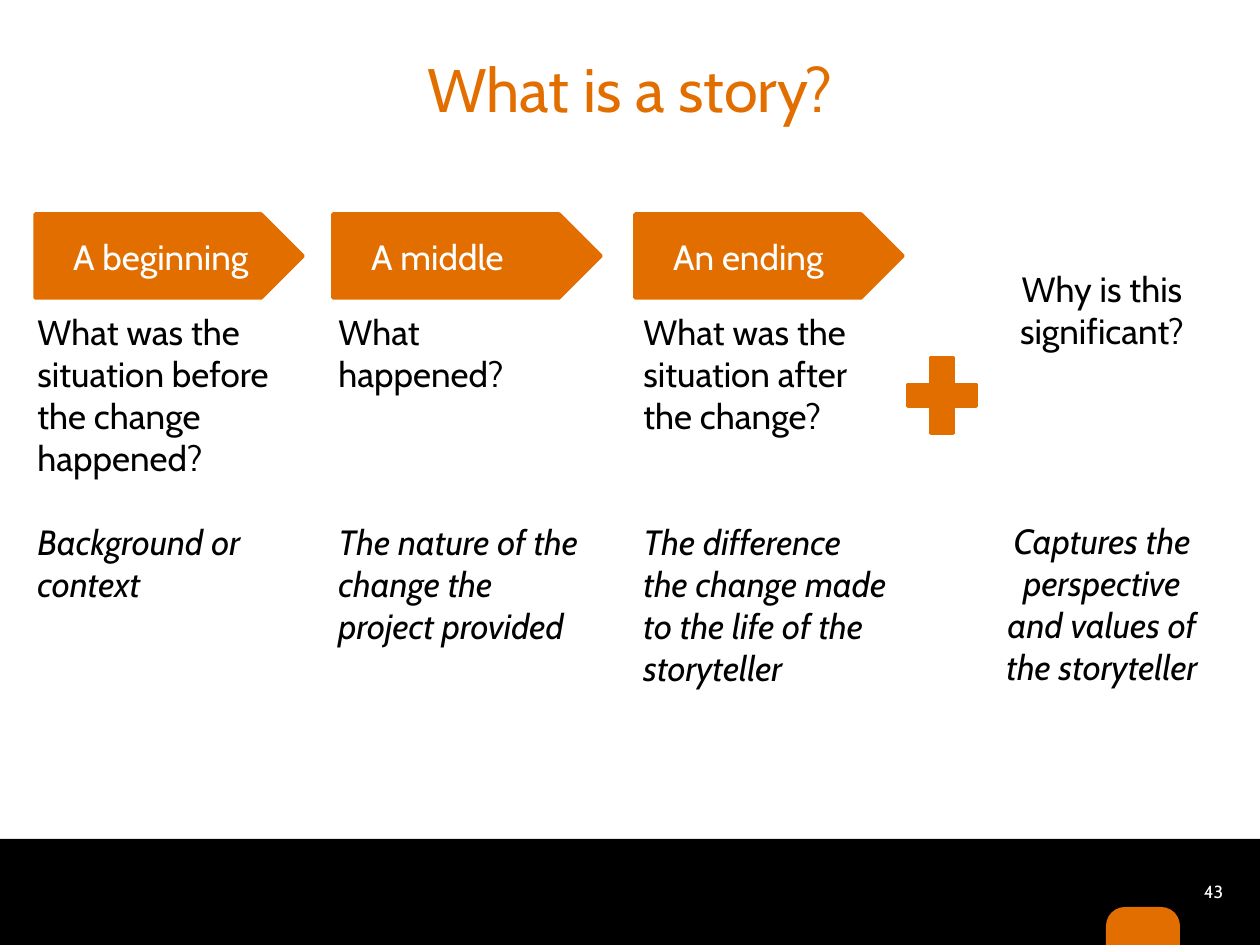
import pptx
import pptx.util
import pptx.dml.color
import pptx.enum.shapes
import pptx.enum.text

Kind = pptx.enum.shapes.MSO_SHAPE
Align = pptx.enum.text.PP_ALIGN
Anchor = pptx.enum.text.MSO_ANCHOR


class Theme:
    font = "Cabin"
    orange, black, white = "E26E00", "000000", "FFFFFF"
    head, body, small = 35, 20, 10
    row = 24  # points in one line of body text


TITLE = "What is a story?"
NUMBER = "43"
# arrow left, text left, label, question, blank rows, answer
STAGES = [
    (35, 25, "A beginning", "What was the situation before the change happened?",
     1, "Background or context"),
    (333, 326, "A middle", "What happened?",
     3, "The nature of the change the project provided"),
    (635, 631, "An ending", "What was the situation after the change?",
     2, "The difference the change made to the life of the storyteller"),
]
WHY = ("Why is this significant?", 4,
       "Captures the perspective and values of the storyteller")

SCALE = 914400 / 126
WIDE, HIGH = 1260, 945
ARROW_TOP, ARROW_H, COL_W = 214, 84, 268
TEXT_TOP = 304


def px(n):
    return pptx.util.Emu(round(n * SCALE))


def color(code):
    return pptx.dml.color.RGBColor.from_string(code)


def style(para, size, code, align=Align.LEFT, slant=False):
    para.alignment = align
    for run in para.runs:
        font = run.font
        font.name, font.size = Theme.font, pptx.util.Pt(size)
        font.color.rgb, font.italic = color(code), slant


def shape(slide, kind, box, code, line=0):
    item = slide.shapes.add_shape(kind, *map(px, box))
    item.shadow.inherit = False
    item.fill.solid()
    item.fill.fore_color.rgb = color(code)
    if line:
        item.line.color.rgb = color(code)
        item.line.width = pptx.util.Pt(line)
    else:
        item.line.fill.background()
    return item


def text(slide, box):
    frame = slide.shapes.add_textbox(*map(px, box)).text_frame
    frame.word_wrap = True
    return frame


def pair(slide, box, ask, gap, answer, align=Align.LEFT):
    """Write a question and, some rows below it, its answer in italics."""
    frame = text(slide, box)
    frame.text = ask
    style(frame.paragraphs[0], Theme.body, Theme.black, align)
    para = frame.add_paragraph()
    para.text = answer
    para.space_before = pptx.util.Pt(gap * Theme.row)
    style(para, Theme.body, Theme.black, align, True)


def stage(slide, left, start, label, ask, gap, answer):
    pair(slide, (start, TEXT_TOP, COL_W, 394), ask, gap, answer)
    arrow = shape(slide, Kind.PENTAGON, (left, ARROW_TOP, COL_W, ARROW_H),
                  Theme.orange, 2)
    frame = arrow.text_frame
    frame.text = label
    frame.word_wrap = True
    frame.vertical_anchor = Anchor.MIDDLE
    frame.margin_left, frame.margin_right = px(38), 0
    style(frame.paragraphs[0], Theme.body, Theme.white)


def main():
    deck = pptx.Presentation()
    deck.slide_width, deck.slide_height = px(WIDE), px(HIGH)
    slide = deck.slides.add_slide(deck.slide_layouts[5])

    title = slide.shapes.title
    title.left, title.top, title.width, title.height = map(px, (112, 50, 1036, 76))
    frame = title.text_frame
    frame.text = TITLE
    frame.auto_size = pptx.enum.text.MSO_AUTO_SIZE.NONE
    frame.vertical_anchor = Anchor.MIDDLE
    style(frame.paragraphs[0], Theme.head, Theme.orange, Align.CENTER)

    shape(slide, Kind.RECTANGLE, (0, 839, WIDE, HIGH - 839), Theme.black)
    badge = shape(slide, Kind.ROUND_2_SAME_RECTANGLE, (1106, 907, 74, 38),
                  Theme.orange)
    badge.adjustments[0] = 0.5
    frame = text(slide, (1196, 877, 60, 35))
    frame.margin_left = frame.margin_right = px(8)
    frame.margin_top = frame.margin_bottom = px(4)
    frame.text = NUMBER
    style(frame.paragraphs[0], Theme.small, Theme.white)

    for row in STAGES:
        stage(slide, *row)
    shape(slide, Kind.MATH_PLUS, (896, 344, 92, 103), Theme.orange, 2)
    pair(slide, (984, 261, 236, 437), *WHY, Align.CENTER)

    deck.save("out.pptx")


if __name__ == "__main__":
    main()
